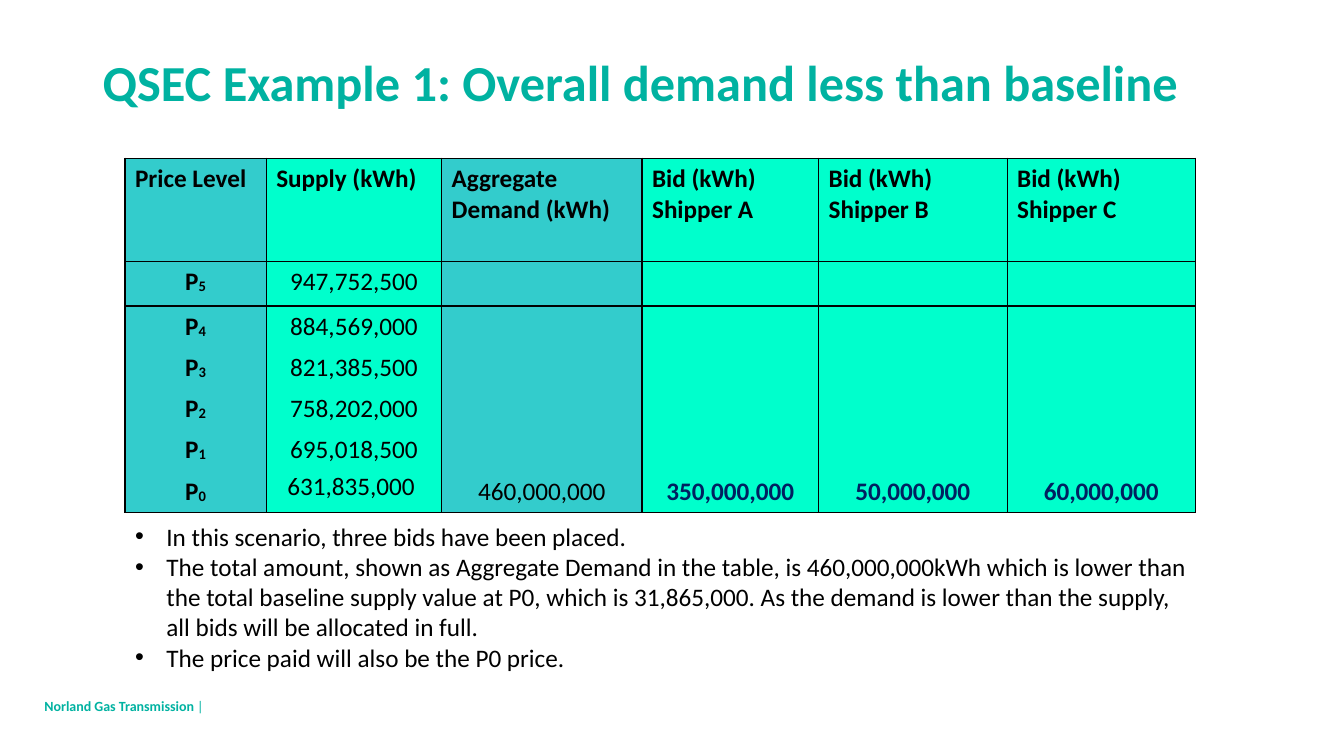
from dataclasses import dataclass
from lxml.etree import SubElement
from pptx import Presentation
from pptx.dml.color import RGBColor
from pptx.enum.text import MSO_ANCHOR, MSO_AUTO_SIZE, PP_ALIGN
from pptx.oxml.ns import qn
from pptx.util import Cm, Pt


@dataclass(frozen=True)
class Theme:
    font: str = "Calibri"
    brand: str = "00B2A1"
    ink: str = "000000"
    bid: str = "002060"
    dark_fill: str = "33CCCC"
    light_fill: str = "00FFCC"
    title: int = 36
    body: int = 18
    footer: int = 10
    plain_table: str = "{2D5ABB26-0587-4C30-8999-92F81FD0307C}"


class SlideBuilder:
    def __init__(self, s, theme):
        self.s, self.theme = s, theme

    def style(self, r, size, color, bold=False):
        r.font.name, r.font.size, r.font.bold = self.theme.font, Pt(size), bold
        r.font.color.rgb = RGBColor.from_string(color)

    def place(self, sp, box):
        sp.left, sp.top, sp.width, sp.height = (Cm(v) for v in box)

    def title(self, text, box):
        sp = self.s.shapes.title
        self.place(sp, box)
        tf = sp.text_frame
        tf.text = text
        tf.vertical_anchor = MSO_ANCHOR.MIDDLE
        tf.auto_size = MSO_AUTO_SIZE.NONE
        p = tf.paragraphs[0]
        p.alignment = PP_ALIGN.LEFT
        self.style(p.runs[0], self.theme.title, self.theme.brand, True)

    def bullets(self, items, box, indent=0.79):
        sp = self.s.placeholders[1]
        self.place(sp, box)
        tf = sp.text_frame
        tf.text = "\n".join(items)
        tf.auto_size = MSO_AUTO_SIZE.NONE
        for p in tf.paragraphs:
            pPr = p._p.get_or_add_pPr()
            pPr.set("marL", str(Cm(indent)))
            pPr.set("indent", str(-Cm(indent)))
            SubElement(pPr, qn("a:buFont"), typeface="Arial")
            SubElement(pPr, qn("a:buChar"), char="•")
            p.space_before = Pt(0)
            self.style(p.runs[0], self.theme.body, self.theme.ink)

    def footer(self, name, mark, box):
        sp = self.s.shapes.add_textbox(*(Cm(v) for v in box))
        tf = sp.text_frame
        tf.word_wrap = True
        tf.vertical_anchor = MSO_ANCHOR.MIDDLE
        tf.margin_left = tf.margin_right = tf.margin_top = tf.margin_bottom = 0
        p = tf.paragraphs[0]
        for text, bold in ((name, True), (mark, False)):
            r = p.add_run()
            r.text = text
            self.style(r, self.theme.footer, self.theme.brand, bold)

    def table(self, left, top, widths, heights):
        shape = self.s.shapes.add_table(len(heights), len(widths), Cm(left), Cm(top),
                                        Cm(sum(widths)), Cm(sum(heights)))
        table = shape.table
        table.first_row = table.horz_banding = False
        shape._element.find(".//" + qn("a:tableStyleId")).text = self.theme.plain_table
        for col, width in zip(table.columns, widths):
            col.width = Cm(width)
        for row, height in zip(table.rows, heights):
            row.height = Cm(height)
        return table

    def borders(self, cell, sides):
        tcPr = cell._tc.get_or_add_tcPr()
        for side in sides:
            ln = SubElement(tcPr, qn("a:ln" + side), w=str(Pt(1)))
            fill = SubElement(ln, qn("a:solidFill"))
            SubElement(fill, qn("a:srgbClr"), val=self.theme.ink)

    def fill(self, cell, color):
        cell.fill.solid()
        cell.fill.fore_color.rgb = RGBColor.from_string(color)

    def cell_text(self, cell, text, color, bold=False, align=PP_ALIGN.CENTER, sub=""):
        cell.text = text
        p = cell.text_frame.paragraphs[0]
        p.alignment = align
        if sub:
            r = p.add_run()
            r.text = sub
            r._r.get_or_add_rPr().set("baseline", "-4000")
        for r in p.runs:
            self.style(r, self.theme.body, color, bold)


HEADERS = ["Price Level", "Supply (kWh)", "Aggregate Demand (kWh)",
           "Bid (kWh) Shipper A", "Bid (kWh) Shipper B", "Bid (kWh) Shipper C"]
SUPPLY = ["947,752,500", "884,569,000", "821,385,500",
          "758,202,000", "695,018,500", "631,835,000 "]
DEMAND = "460,000,000"
BIDS = ["350,000,000", "50,000,000", "60,000,000"]
DARK_COLUMNS = (0, 2)
WIDTHS = [3.56, 4.42, 5.05, 4.45, 4.75, 4.75, 0.58]
HEIGHTS = [2.6, 1.12] + [1.04] * 5
BULLETS = [
    "In this scenario, three bids have been placed.",
    "The total amount, shown as Aggregate Demand in the table, is 460,000,000kWh "
    "which is lower than the total baseline supply value at P0, which is 31,865,000. "
    "As the demand is lower than the supply, all bids will be allocated in full.",
    "The price paid will also be the P0 price.",
]


def auction_table(b):
    t = b.theme
    table = b.table(3.15, 3.99, WIDTHS, HEIGHTS)
    last = len(SUPPLY)

    # Borders and fills; the narrow last column stays clear
    for i in range(last + 1):
        for j in range(len(HEADERS)):
            cell = table.cell(i, j)
            sides = ["L", "R"] + ["T"] * (i < 2) + ["B"] * (i in (0, last))
            b.borders(cell, sides)
            b.fill(cell, t.dark_fill if j in DARK_COLUMNS else t.light_fill)
        b.borders(table.cell(i, len(HEADERS)), ["L"])

    # Header row
    for j, header in enumerate(HEADERS):
        b.cell_text(table.cell(0, j), header, t.ink, True, PP_ALIGN.LEFT)

    # Price levels and supply
    for i, supply in enumerate(SUPPLY, 1):
        b.cell_text(table.cell(i, 0), "P", t.ink, True, sub=str(last - i))
        b.cell_text(table.cell(i, 1), supply, t.ink)
    base = table.cell(last, 1)
    base.margin_left = base.margin_right = base.margin_top = base.margin_bottom = 0

    # Demand and bids at the lowest price
    b.cell_text(table.cell(last, 2), DEMAND, t.ink)
    for j, bid in enumerate(BIDS, 3):
        b.cell_text(table.cell(last, j), bid, t.bid, True)


def main():
    prs = Presentation()
    prs.slide_width, prs.slide_height = Cm(33.87), Cm(19.05)
    b = SlideBuilder(prs.slides.add_slide(prs.slide_layouts[1]), Theme())
    b.title("QSEC Example 1: Overall demand less than baseline", (2.33, 1.02, 30, 2.08))
    auction_table(b)
    b.bullets(BULLETS, (3.15, 13, 27.23, 4.11))
    b.footer("Norland Gas Transmission ", "|", (1.12, 17.48, 4.45, 0.61))
    prs.save("out.pptx")


if __name__ == "__main__":
    main()
